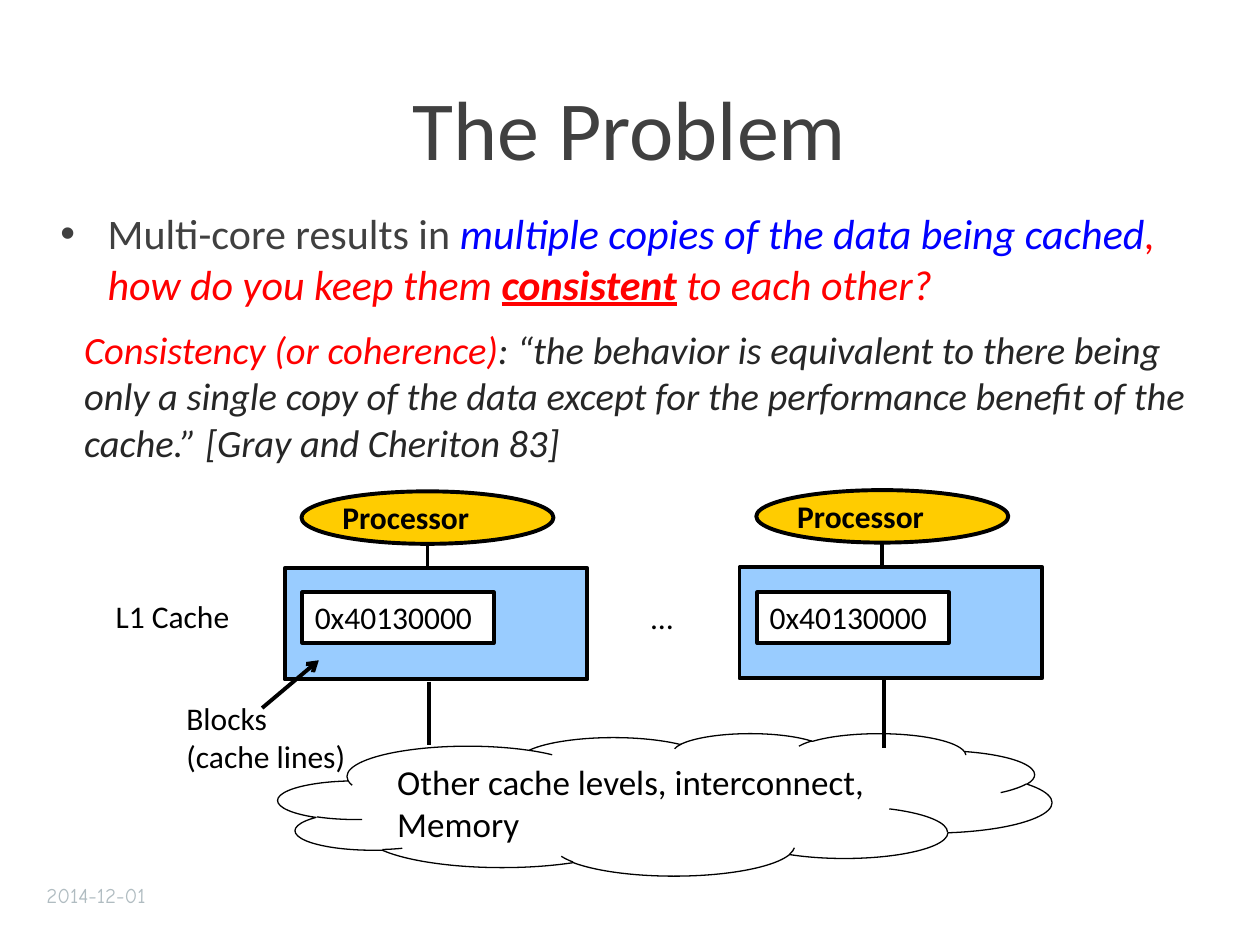
from lxml import etree
from pptx import Presentation
from pptx.dml.color import RGBColor
from pptx.enum.shapes import MSO_CONNECTOR, MSO_SHAPE
from pptx.enum.text import MSO_ANCHOR, PP_ALIGN
from pptx.oxml.ns import qn
from pptx.util import Pt

RECTANGLE, OVAL, CLOUD = MSO_SHAPE.RECTANGLE, MSO_SHAPE.OVAL, MSO_SHAPE.CLOUD
STRAIGHT = MSO_CONNECTOR.STRAIGHT
TOP, MIDDLE = MSO_ANCHOR.TOP, MSO_ANCHOR.MIDDLE
LEFT, CENTER = PP_ALIGN.LEFT, PP_ALIGN.CENTER

COLORS = {
    "black": "000000", "white": "FFFFFF", "title": "404040", "quote": "262626",
    "blue": "0000FF", "red": "FF0000", "date": "B0BCC1",
    "processor": "FFCC00", "cache": "99CCFF",
}

QUESTION = [
    ("Multi-core results in ", {}),
    ("multiple copies of the data being cached", {"color": "blue", "italic": True}),
    (", how do you keep them ", {"color": "red", "italic": True}),
    ("consistent", {"color": "red", "italic": True, "bold": True, "underline": True}),
    (" to each other?", {"color": "red", "italic": True}),
]
DEFINITION = [
    ("Consistency (or coherence)", {"color": "red"}),
    (": “the behavior is equivalent to there being only a single copy of the data "
     "except for the performance benefit of the cache.” [Gray and Cheriton 83]", {}),
]
LABELS = [
    (["L1 Cache"], (59, 337.7, 119, 36.5)),
    (["…"], (365, 338.4, 39, 36.5)),
    (["Blocks", "(cache lines)"], (99.4, 396, 110, 51)),
]
CORES = [
    {"left": 162.7, "top": 280.8, "bus": (389.5, 425.5)},
    {"left": 422.6, "top": 280.1, "bus": (387.4, 427.7)},
]
ADDRESS = "0x40130000"
BLOCK_TOP = 338.4

deck = Presentation()
deck.slide_width, deck.slide_height = Pt(720), Pt(540)
page = deck.slides.add_slide(deck.slide_layouts[6])


def rgb(name):
    return RGBColor.from_string(COLORS[name])


def write(shape, paragraphs, size=18, color="black", font="Calibri", bold=False,
          italic=False, align=LEFT, anchor=TOP, wrap=True, bullet=None):
    frame = shape.text_frame
    frame.word_wrap = wrap
    frame.vertical_anchor = anchor
    for index, content in enumerate(paragraphs):
        para = frame.add_paragraph() if index else frame.paragraphs[0]
        para.alignment = align
        if bullet:
            properties = para._p.get_or_add_pPr()
            properties.set("marL", str(Pt(27)))
            properties.set("indent", str(Pt(-27)))
            bullet_color = etree.SubElement(properties, qn("a:buClr"))
            etree.SubElement(bullet_color, qn("a:srgbClr"), val=COLORS[color])
            etree.SubElement(properties, qn("a:buFont"), typeface="Arial")
            etree.SubElement(properties, qn("a:buChar"), char=bullet)
        spans = [(content, {})] if isinstance(content, str) else content
        for text, style in spans:
            span = para.add_run()
            span.text = text
            span.font.name = font
            span.font.size = Pt(size)
            span.font.bold = style.get("bold", bold)
            span.font.italic = style.get("italic", italic)
            span.font.underline = style.get("underline", False)
            span.font.color.rgb = rgb(style.get("color", color))


def add_text(paragraphs, place, **style):
    box = page.shapes.add_textbox(*map(Pt, place))
    write(box, paragraphs, **style)


def add_figure(kind, place, fill=None, width=2.25):
    shape = page.shapes.add_shape(kind, *map(Pt, place))
    shape.shadow.inherit = False
    if fill:
        shape.fill.solid()
        shape.fill.fore_color.rgb = rgb(fill)
    else:
        shape.fill.background()
    shape.line.color.rgb = rgb("black")
    shape.line.width = Pt(width)
    return shape


def add_line(start, end, arrow=False):
    line = page.shapes.add_connector(STRAIGHT, *map(Pt, start + end))
    line.line.color.rgb = rgb("black")
    line.line.width = Pt(2.25)
    if arrow:
        etree.SubElement(line.line._get_or_add_ln(), qn("a:tailEnd"), type="arrow")
    etree.SubElement(line._element.spPr, qn("a:effectLst"))


add_text(["The Problem"], (70.6, 19.4, 578, 106), size=48, color="title",
         align=CENTER, anchor=MIDDLE)
add_text([QUESTION], (27.4, 115.2, 650, 330.5), size=24, color="title", bullet="•")
add_text(["2014-12-01"], (19.4, 501.8, 168, 20), size=12, color="date",
         font="Comic Neue", anchor=MIDDLE)

for core in CORES:
    left, top = core["left"], core["top"]
    center = left + 81.6
    add_figure(OVAL, (left + 9.6, top, 144, 30), "processor")
    add_text(["Processor"], (left + 25.9, top, 102, 29), bold=True,
             anchor=MIDDLE, wrap=False)
    add_figure(RECTANGLE, (left, top + 44, 173, 63.4), "cache")
    block = add_figure(RECTANGLE, (left + 10.1, BLOCK_TOP, 109.4, 29), "white")
    write(block, [ADDRESS])
    add_line((center, top + 29.7), (center, top + 44.5))
    bus_top, bus_bottom = core["bus"]
    add_line((center + 0.8, bus_top), (center + 0.8, bus_bottom))

for lines, place in LABELS:
    add_text(lines, place, wrap=False)
add_line((149.8, 404.6), (182.2, 377.3), arrow=True)

memory = add_figure(CLOUD, (159, 419, 442, 81.4), width=0.75)
write(memory, ["Other cache levels, interconnect, Memory"], size=20)
add_text([DEFINITION], (41, 182.9, 645, 87), size=22, color="quote", italic=True)

deck.save("out.pptx")
